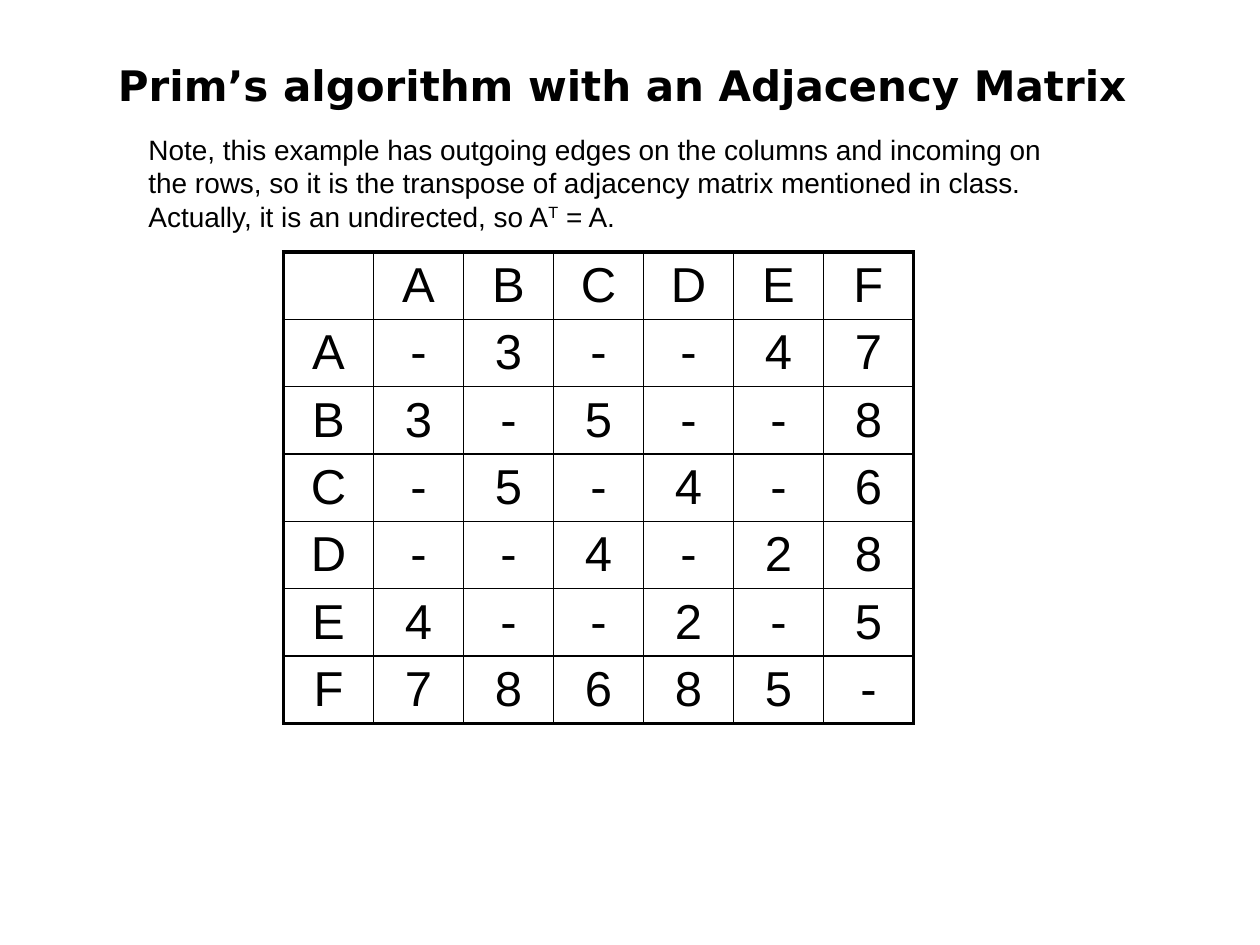
from dataclasses import dataclass

from lxml.etree import SubElement
from pptx import Presentation
from pptx.dml.color import RGBColor
from pptx.enum.text import MSO_ANCHOR, PP_ALIGN
from pptx.oxml.ns import qn
from pptx.util import Inches, Pt


@dataclass(frozen=True)
class Theme:
    ink: str = "000000"
    title_font: str = "DejaVu Sans"
    body_font: str = "Arial"
    title_size: float = 24
    note_size: float = 16
    cell_size: float = 28
    inner_line: float = 1
    outer_line: float = 2.25


theme = Theme()


def add_text(paragraph, text, size, font=theme.body_font, bold=False, superscript=False):
    run = paragraph.add_run()
    run.text = text
    run.font.size = Pt(size)
    run.font.name = font
    run.font.bold = bold
    run.font.color.rgb = RGBColor.from_string(theme.ink)
    if superscript:
        run.font._element.set("baseline", "30000")


def add_border(cell, side, width):
    """Draw one cell edge; side is L, R, T or B. Call before any fill is set."""
    properties = cell._tc.get_or_add_tcPr()
    line = SubElement(properties, qn(f"a:ln{side}"), w=str(Pt(width)))
    fill = SubElement(line, qn("a:solidFill"))
    SubElement(fill, qn("a:srgbClr"), val=theme.ink)


presentation = Presentation()
presentation.slide_width = Inches(10)
presentation.slide_height = Inches(7.5)
slide = presentation.slides.add_slide(presentation.slide_layouts[6])

# Adjacency matrix: the vertex names head both the rows and the columns
vertices = "ABCDEF"
weights = ["-3--47", "3-5--8", "-5-4-6", "--4-28", "4--2-5", "78685-"]
matrix = [["", *vertices]] + [[vertex, *row] for vertex, row in zip(vertices, weights)]
count = len(matrix)
last = count - 1

table = slide.shapes.add_table(
    count, count, Inches(2.25), Inches(2), Inches(5), Inches(3.74)
).table
table.first_row = False
table.horz_banding = False

for row_index, row in enumerate(matrix):
    for column_index, value in enumerate(row):
        cell = table.cell(row_index, column_index)
        outer_edges = {
            "L": column_index == 0,
            "R": column_index == last,
            "T": row_index == 0,
            "B": row_index == last,
        }
        for side, is_outer in outer_edges.items():
            add_border(cell, side, theme.outer_line if is_outer else theme.inner_line)
        cell.fill.background()
        cell.vertical_anchor = MSO_ANCHOR.TOP
        cell.margin_top = Inches(0.05)
        cell.margin_bottom = Inches(0.03)
        paragraph = cell.text_frame.paragraphs[0]
        paragraph.alignment = PP_ALIGN.CENTER
        if value:
            add_text(paragraph, value, theme.cell_size)

# Title
title = slide.shapes.add_textbox(Inches(0.63), Inches(0.42), Inches(8.62), Inches(0.5))
title.text_frame.word_wrap = True
paragraph = title.text_frame.paragraphs[0]
paragraph.alignment = PP_ALIGN.CENTER
add_text(paragraph, "Prim’s algorithm with an Adjacency Matrix", theme.title_size,
         font=theme.title_font, bold=True)

# Note on the direction of the edges
note = slide.shapes.add_textbox(Inches(1.08), Inches(1), Inches(7.58), Inches(0.91))
note.text_frame.word_wrap = True
paragraph = note.text_frame.paragraphs[0]
add_text(paragraph,
         "Note, this example has outgoing edges on the columns and incoming on the rows, "
         "so it is the transpose of adjacency matrix mentioned in class. "
         "Actually, it is an undirected, so A", theme.note_size)
add_text(paragraph, "T", theme.note_size, superscript=True)
add_text(paragraph, " = A.", theme.note_size)

presentation.save("out.pptx")
